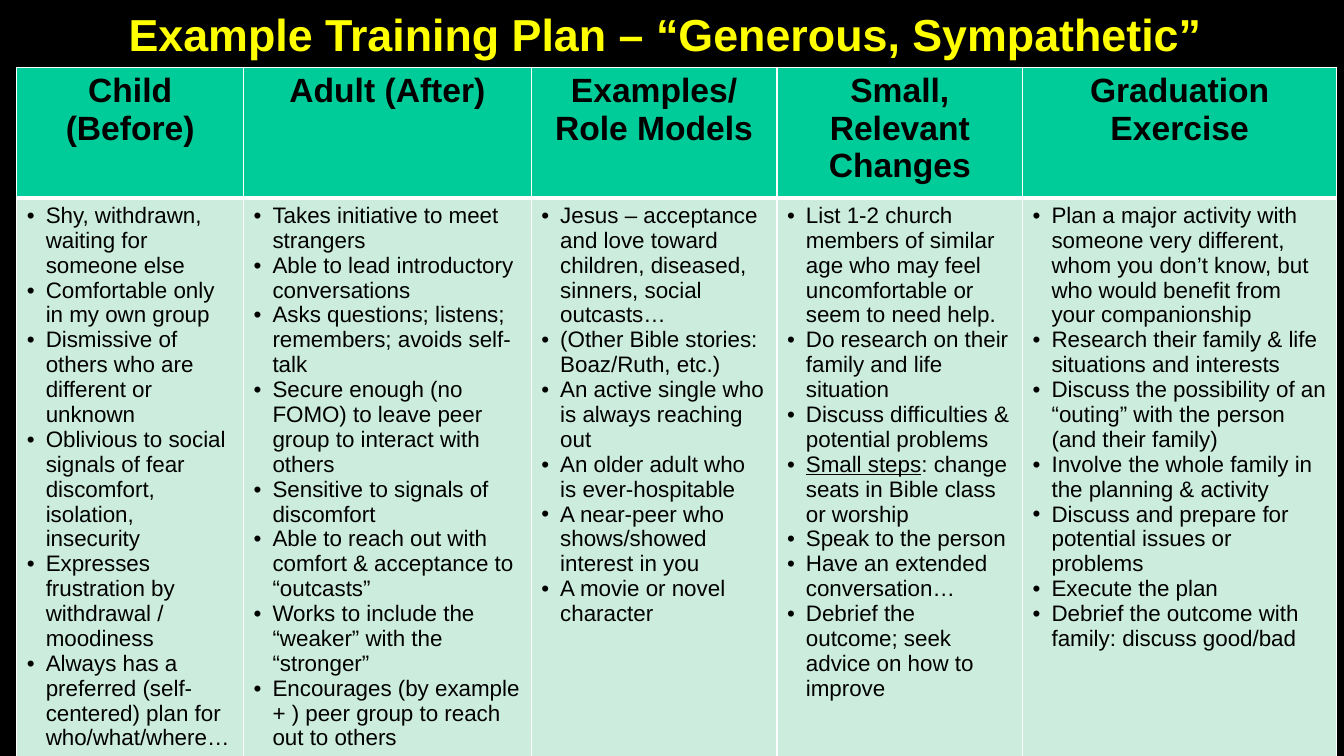
from lxml.etree import SubElement
from pptx import Presentation
from pptx.dml.color import RGBColor
from pptx.enum.shapes import MSO_SHAPE
from pptx.enum.text import MSO_ANCHOR, PP_ALIGN
from pptx.oxml.ns import qn
from pptx.util import Pt

PX = 9525
FONT = "Arial"
COLORS = {
    "background": "000000",
    "title": "FFFF00",
    "text": "000000",
    "header": "00CC99",
    "body": "CCECDE",
    "border": "FFFFFF",
}
SLIDE_BOX = (0, 0, 1280, 720)
TITLE_BOX = (96, 0, 1088, 64)
TABLE_BOX = (16, 64, 1257, 639)
ROW_HEIGHTS = (64, 575)
INDENT = 18

TITLE = "Example Training Plan – “Generous, Sympathetic” "
COLUMNS = [
    ("Child (Before)", 216, [
        "Shy, withdrawn, waiting for someone else",
        "Comfortable only in my own group",
        "Dismissive of others who are different or unknown",
        "Oblivious to social signals of fear discomfort, isolation, insecurity",
        "Expresses frustration by withdrawal / moodiness",
        "Always has a preferred (self-centered) plan for who/what/where…",
    ]),
    ("Adult (After)", 274, [
        "Takes initiative to meet strangers",
        "Able to lead introductory conversations",
        "Asks questions; listens; remembers; avoids self-talk",
        "Secure enough (no FOMO) to leave peer group to interact with others",
        "Sensitive to signals of discomfort",
        "Able to reach out with comfort & acceptance to “outcasts”",
        "Works to include the “weaker” with the “stronger”",
        "Encourages (by example + ) peer group to reach out to others",
    ]),
    ("Examples/\vRole Models", 234, [
        "Jesus – acceptance and love toward children, diseased, sinners, social outcasts…",
        "(Other Bible stories: Boaz/Ruth, etc.)",
        "An active single who is always reaching out",
        "An older adult who is ever-hospitable",
        "A near-peer who shows/showed interest in you",
        "A movie or novel character",
    ]),
    ("Small, Relevant Changes", 234, [
        "List 1-2 church members of similar age who may feel uncomfortable or seem to need help.",
        "Do research on their family and life situation",
        "Discuss difficulties & potential problems",
        ("Small steps", ": change seats in Bible class or worship"),
        "Speak to the person",
        "Have an extended conversation…",
        "Debrief the outcome; seek advice on how to improve",
    ]),
    ("Graduation Exercise", 299, [
        "Plan a major activity with someone very different, whom you don’t know, "
        "but who would benefit from your companionship",
        "Research their family & life situations and interests",
        "Discuss the possibility of an “outing” with the person (and their family)",
        "Involve the whole family in the planning & activity",
        "Discuss and prepare for potential issues or problems",
        "Execute the plan",
        "Debrief the outcome with family: discuss good/bad",
    ]),
]


def to_emu(box):
    """Turn a box of px into EMU."""
    return [length * PX for length in box]


def format_runs(paragraph, size, color, bold=False):
    """Give every run of a paragraph its font."""
    for run in paragraph.runs:
        run.font.name = FONT
        run.font.size = Pt(size)
        run.font.bold = bold
        run.font.color.rgb = RGBColor.from_string(COLORS[color])


def add_background(slide, box):
    """Cover the box with the dark backdrop."""
    shape = slide.shapes.add_shape(MSO_SHAPE.RECTANGLE, *to_emu(box))
    shape.shadow.inherit = False
    color = RGBColor.from_string(COLORS["background"])
    shape.fill.solid()
    shape.fill.fore_color.rgb = color
    shape.line.color.rgb = color
    shape.line.width = Pt(0.75)


def add_title(slide, box):
    """Place the centred headline in the box."""
    text_frame = slide.shapes.add_textbox(*to_emu(box)).text_frame
    text_frame.word_wrap = True
    text_frame.vertical_anchor = MSO_ANCHOR.MIDDLE
    text_frame.text = TITLE
    paragraph = text_frame.paragraphs[0]
    paragraph.alignment = PP_ALIGN.CENTER
    format_runs(paragraph, 32, "title", bold=True)


def style_cell(cell, fill, top, bottom):
    """Set the borders and fill of a cell."""
    properties = cell._tc.get_or_add_tcPr()
    for side, width in (("L", 1), ("R", 1), ("T", top), ("B", bottom)):
        line = SubElement(properties, qn(f"a:ln{side}"), w=str(Pt(width)))
        solid = SubElement(line, qn("a:solidFill"))
        SubElement(solid, qn("a:srgbClr"), val=COLORS["border"])
    cell.fill.solid()
    cell.fill.fore_color.rgb = RGBColor.from_string(COLORS[fill])


def fill_header(cell, heading):
    """Write a column heading."""
    style_cell(cell, "header", 1, 3)
    cell.text_frame.text = heading
    paragraph = cell.text_frame.paragraphs[0]
    paragraph.alignment = PP_ALIGN.CENTER
    format_runs(paragraph, 24, "text", bold=True)


def fill_body(cell, items):
    """Write a bulleted list, underlining the lead of a split item."""
    style_cell(cell, "body", 3, 1)
    text_frame = cell.text_frame
    for index, item in enumerate(items):
        paragraph = text_frame.add_paragraph() if index else text_frame.paragraphs[0]
        if isinstance(item, tuple):
            for part in item:
                paragraph.add_run().text = part
            paragraph.runs[0].font.underline = True
        else:
            paragraph.text = item
        format_runs(paragraph, 16, "text")
        properties = paragraph._p.get_or_add_pPr()
        properties.set("marL", str(INDENT * PX))
        properties.set("indent", str(-INDENT * PX))
        SubElement(properties, qn("a:buFont"), typeface=FONT)
        SubElement(properties, qn("a:buChar"), char="•")


def add_plan_table(slide, box):
    """Place the training plan table in the box."""
    table = slide.shapes.add_table(len(ROW_HEIGHTS), len(COLUMNS), *to_emu(box)).table
    for row, height in zip(table.rows, ROW_HEIGHTS):
        row.height = height * PX
    for index, (heading, width, items) in enumerate(COLUMNS):
        table.columns[index].width = width * PX
        fill_header(table.cell(0, index), heading)
        fill_body(table.cell(1, index), items)


def main():
    """Build and save the slide."""
    presentation = Presentation()
    presentation.slide_width, presentation.slide_height = to_emu(SLIDE_BOX[2:])
    slide = presentation.slides.add_slide(presentation.slide_layouts[6])
    add_background(slide, SLIDE_BOX)
    add_title(slide, TITLE_BOX)
    add_plan_table(slide, TABLE_BOX)
    presentation.save("out.pptx")


if __name__ == "__main__":
    main()
